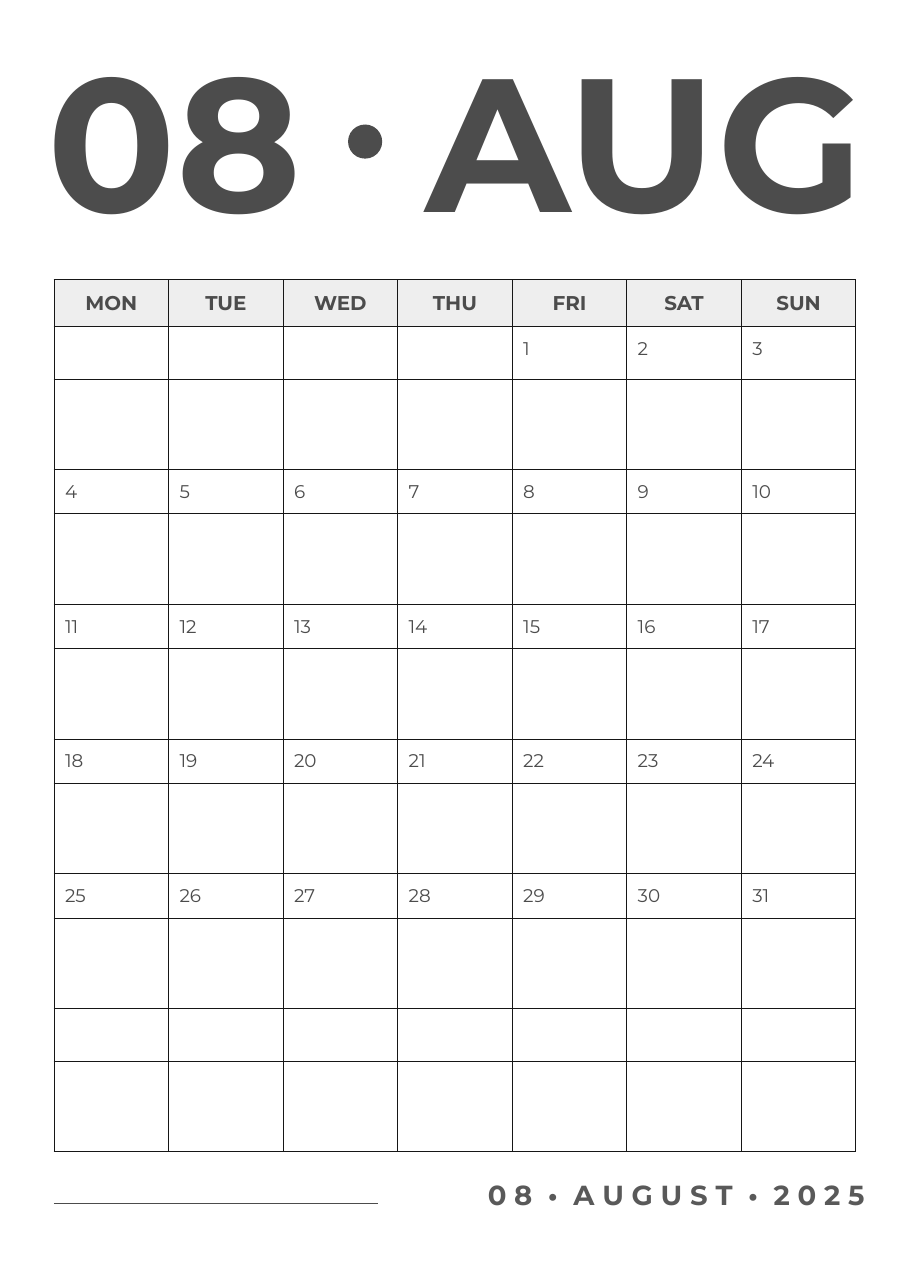
from dataclasses import dataclass

from lxml.etree import SubElement
from pptx import Presentation
from pptx.dml.color import RGBColor
from pptx.enum.shapes import MSO_CONNECTOR, MSO_SHAPE
from pptx.enum.text import MSO_ANCHOR, MSO_AUTO_SIZE, PP_ALIGN
from pptx.oxml.ns import qn
from pptx.shapes.autoshape import Shape
from pptx.slide import Slide
from pptx.table import _Cell
from pptx.text.text import TextFrame
from pptx.util import Inches, Length, Pt

COLORS = {
    "ink": "4C4C4C",
    "footer": "595959",
    "border": "161616",
    "header": "EEEEEE",
}
FONT = "Montserrat"
SLIDE_WIDTH = Inches(8.27)
SLIDE_HEIGHT = Inches(11.69)
PLAIN_TABLE_STYLE = "{2D5ABB26-0587-4C30-8999-92F81FD0307C}"

WEEKDAYS = ("MON", "TUE", "WED", "THU", "FRI", "SAT", "SUN")
FIRST_WEEKDAY = WEEKDAYS.index("FRI")
DAYS_IN_MONTH = 31
WEEKS = 6
HEADER_HEIGHT = Inches(0.42)
DAY_HEIGHT = Inches(0.4)
BLANK_DAY_HEIGHT = Inches(0.48)
NOTE_HEIGHT = Inches(0.82)
CELL_MARGIN = Inches(0.1)


def across(percent: float) -> Length:
    return Length(round(SLIDE_WIDTH * percent / 100))


def down(percent: float) -> Length:
    return Length(round(SLIDE_HEIGHT * percent / 100))


@dataclass(frozen=True)
class Area:
    left: float
    top: float
    width: float
    height: float

    def lengths(self) -> tuple[Length, Length, Length, Length]:
        return across(self.left), down(self.top), across(self.width), down(self.height)


@dataclass(frozen=True)
class TextStyle:
    size: float
    bold: bool = True
    color: str = "ink"
    alignment: PP_ALIGN = PP_ALIGN.LEFT


@dataclass(frozen=True)
class Label:
    text: str
    area: Area
    style: TextStyle


CALENDAR = Area(5.93, 21.73, 88.03, 67.6)
NOTE_LINE = Area(5.93, 93.41, 35.55, 0)
DOT = Area(38.21, 9.67, 3.75, 2.65)
MONTH_NUMBER = Label("08", Area(5.2, 1.8, 32.53, 17.88), TextStyle(124))
LABELS = (
    Label("AUG", Area(42.32, 1.8, 52.48, 17.88), TextStyle(124, alignment=PP_ALIGN.RIGHT)),
    Label(
        "0 8  •  A U G U S T  •  2 0 2 5",
        Area(46.8, 91.45, 48.13, 2.57),
        TextStyle(18, color="footer", alignment=PP_ALIGN.RIGHT),
    ),
)
WEEKDAY_STYLE = TextStyle(13, alignment=PP_ALIGN.CENTER)
DAY_STYLE = TextStyle(12, bold=False)


def rgb(name: str) -> RGBColor:
    return RGBColor.from_string(COLORS[name])


def write(text_frame: TextFrame, text: str, style: TextStyle) -> None:
    text_frame.text = text
    paragraph = text_frame.paragraphs[0]
    paragraph.alignment = style.alignment
    for run in paragraph.runs:
        run.font.name = FONT
        run.font.size = Pt(style.size)
        run.font.bold = style.bold
        run.font.color.rgb = rgb(style.color)


def fill_label(shape: Shape, label: Label) -> None:
    shape.left, shape.top, shape.width, shape.height = label.area.lengths()
    text_frame = shape.text_frame
    text_frame.margin_left = text_frame.margin_right = 0
    text_frame.margin_top = text_frame.margin_bottom = 0
    text_frame.word_wrap = True
    text_frame.auto_size = MSO_AUTO_SIZE.NONE
    text_frame.vertical_anchor = MSO_ANCHOR.TOP
    write(text_frame, label.text, label.style)


def draw_borders(cell: _Cell, sides: str) -> None:
    properties = cell._tc.get_or_add_tcPr()
    for position, side in enumerate(sides):
        line = SubElement(properties, qn(f"a:ln{side}"), w=str(Pt(0.75)))
        properties.insert(position, line)
        fill = SubElement(line, qn("a:solidFill"))
        SubElement(fill, qn("a:srgbClr"), val=COLORS["border"])


def write_cell(cell: _Cell, text: str, style: TextStyle) -> None:
    cell.margin_left = cell.margin_right = CELL_MARGIN
    cell.margin_top = cell.margin_bottom = CELL_MARGIN
    write(cell.text_frame, text, style)


def draw_calendar(slide: Slide) -> None:
    frame = slide.shapes.add_table(1 + 2 * WEEKS, len(WEEKDAYS), *CALENDAR.lengths())
    table = frame.table
    table.first_row = table.horz_banding = False
    table._tbl.tblPr.find(qn("a:tableStyleId")).text = PLAIN_TABLE_STYLE
    for column in table.columns:
        column.width = across(CALENDAR.width / len(WEEKDAYS))

    table.rows[0].height = HEADER_HEIGHT
    for column, weekday in enumerate(WEEKDAYS):
        cell = table.cell(0, column)
        cell.fill.solid()
        cell.fill.fore_color.rgb = rgb("header")
        cell.vertical_anchor = MSO_ANCHOR.MIDDLE
        write_cell(cell, weekday, WEEKDAY_STYLE)
        draw_borders(cell, "LRTB")

    for week in range(WEEKS):
        day_row = 1 + 2 * week
        has_blank_days = week in (0, WEEKS - 1)
        table.rows[day_row].height = BLANK_DAY_HEIGHT if has_blank_days else DAY_HEIGHT
        table.rows[day_row + 1].height = NOTE_HEIGHT
        for column in range(len(WEEKDAYS)):
            day_cell = table.cell(day_row, column)
            note_cell = table.cell(day_row + 1, column)
            day = week * len(WEEKDAYS) + column - FIRST_WEEKDAY + 1
            if 1 <= day <= DAYS_IN_MONTH:
                write_cell(day_cell, str(day), DAY_STYLE)
            for cell, sides in ((day_cell, "LRT"), (note_cell, "LRB")):
                cell.fill.background()
                draw_borders(cell, sides)


def draw_note_line(slide: Slide) -> None:
    left, top, width, height = NOTE_LINE.lengths()
    connector = slide.shapes.add_connector(
        MSO_CONNECTOR.STRAIGHT, left, top, left + width, top + height
    )
    connector.line.color.rgb = rgb("ink")
    connector.line.width = Pt(0.75)
    SubElement(connector._element.spPr, qn("a:effectLst"))


def draw_dot(slide: Slide) -> None:
    dot = slide.shapes.add_shape(MSO_SHAPE.OVAL, *DOT.lengths())
    dot.shadow.inherit = False
    dot.fill.solid()
    dot.fill.fore_color.rgb = rgb("ink")
    dot.line.fill.background()


def main() -> None:
    presentation = Presentation()
    presentation.slide_width = SLIDE_WIDTH
    presentation.slide_height = SLIDE_HEIGHT
    slide = presentation.slides.add_slide(presentation.slide_layouts.get_by_name("Title Only"))
    fill_label(slide.shapes.title, MONTH_NUMBER)
    draw_calendar(slide)
    draw_note_line(slide)
    for label in LABELS:
        fill_label(slide.shapes.add_textbox(*label.area.lengths()), label)
    draw_dot(slide)
    presentation.save("out.pptx")


if __name__ == "__main__":
    main()
